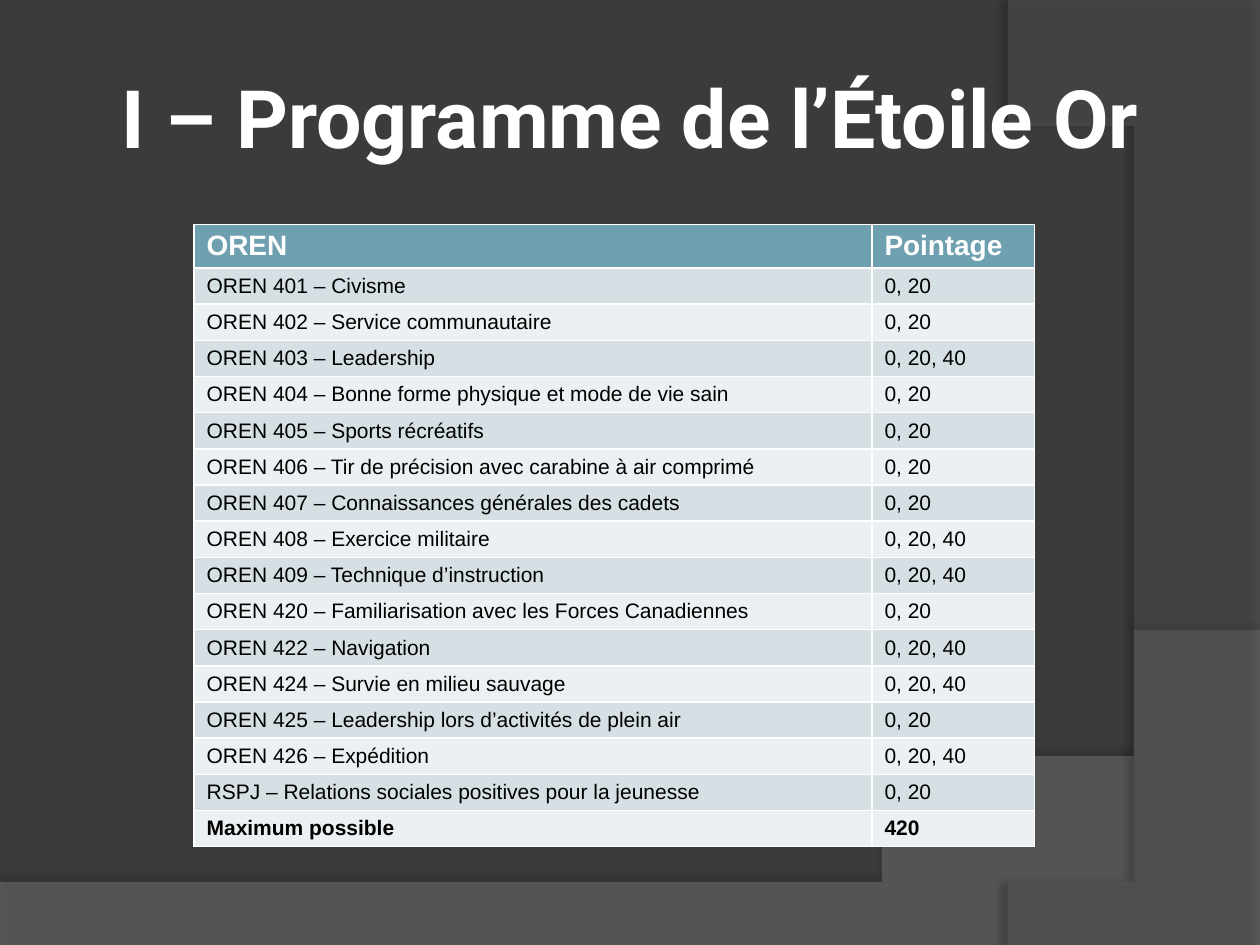
from dataclasses import dataclass
from lxml import etree
from pptx import Presentation
from pptx.dml.color import RGBColor
from pptx.enum.text import MSO_ANCHOR, PP_ALIGN
from pptx.oxml.ns import qn
from pptx.util import Inches, Pt

CENTER = PP_ALIGN.CENTER
MIDDLE = MSO_ANCHOR.MIDDLE

BACKGROUND = RGBColor(0x3B, 0x3B, 0x3B)
WHITE = RGBColor(0xFF, 0xFF, 0xFF)
BLACK = RGBColor(0, 0, 0)
HEADER = RGBColor(0x6E, 0xA0, 0xB0)
BANDS = (RGBColor(0xD5, 0xDF, 0xE4), RGBColor(0xEB, 0xF0, 0xF2))

Point = tuple[float, float]


@dataclass
class Sweep:
    """Curved background area: straight corners, closed by one Bezier curve."""
    corners: list[Point]
    curve: tuple[Point, Point, Point, Point]
    color: RGBColor
    alpha: int
    shadow_alpha: int
    blur: float
    distance: float
    direction: int


SWEEPS = [
    Sweep([(0, 7.05), (0, 7.5), (10, 7.5)],
          ((10, 5.2), (5.59, 7.29), (3.91, 7.19), (0, 7.05)),
          RGBColor(0x7F, 0x7F, 0x7F), 45, 35, 4, 3.5, 270),
    Sweep([(10, 0.02), (10, 7.5)],
          ((8.21, 7.5), (9.35, 6.19), (10.18, 3), (8, 0)),
          RGBColor(0x5E, 0x5E, 0x5E), 40, 45, 4, 4, 180),
]

ROWS = [
    ("OREN", "Pointage"),
    ("OREN 401 – Civisme", "0, 20"),
    ("OREN 402 – Service communautaire", "0, 20"),
    ("OREN 403 – Leadership", "0, 20, 40"),
    ("OREN 404 – Bonne forme physique et mode de vie sain", "0, 20"),
    ("OREN 405 – Sports récréatifs", "0, 20"),
    ("OREN 406 – Tir de précision avec carabine à air comprimé", "0, 20"),
    ("OREN 407 – Connaissances générales des cadets", "0, 20"),
    ("OREN 408 – Exercice militaire", "0, 20, 40"),
    ("OREN 409 – Technique d’instruction", "0, 20, 40"),
    ("OREN 420 – Familiarisation avec les Forces Canadiennes", "0, 20"),
    ("OREN 422 – Navigation", "0, 20, 40"),
    ("OREN 424 – Survie en milieu sauvage", "0, 20, 40"),
    ("OREN 425 – Leadership lors d’activités de plein air", "0, 20"),
    ("OREN 426 – Expédition", "0, 20, 40"),
    ("RSPJ – Relations sociales positives pour la jeunesse", "0, 20"),
    ("Maximum possible", "420"),
]
COLUMN_WIDTHS = (5.38, 1.29)
HEADER_HEIGHT, ROW_HEIGHT = 0.34, 0.28


def bezier(points: tuple[Point, ...], steps: int = 60) -> list[Point]:
    weights = [((1 - t) ** 3, 3 * t * (1 - t) ** 2, 3 * t ** 2 * (1 - t), t ** 3)
               for t in (i / steps for i in range(steps + 1))]
    return [(sum(w * x for w, (x, _) in zip(ws, points)),
             sum(w * y for w, (_, y) in zip(ws, points))) for ws in weights]


def add_alpha(color_el, percent: int) -> None:
    etree.SubElement(color_el, qn("a:alpha"), val=str(percent * 1000))


def add_sweep(s, sweep: Sweep):
    start, *rest = sweep.corners + bezier(sweep.curve)
    builder = s.shapes.build_freeform(*start, scale=Inches(1))
    builder.add_line_segments(rest, close=True)
    sp = builder.convert_to_shape()
    sp.fill.solid()
    sp.fill.fore_color.rgb = sweep.color
    sp.line.fill.background()
    sp.shadow.inherit = False
    props = sp.element.spPr
    add_alpha(props.find(f".//{qn('a:srgbClr')}"), sweep.alpha)
    shadow = etree.SubElement(
        props.find(qn("a:effectLst")), qn("a:outerShdw"),
        blurRad=str(Pt(sweep.blur)), dist=str(Pt(sweep.distance)),
        dir=str(sweep.direction * 60000), algn="ctr", rotWithShape="0")
    add_alpha(etree.SubElement(shadow, qn("a:srgbClr"), val=str(BLACK)),
              sweep.shadow_alpha)
    return sp


def write(tf, text: str, font: str, size: float, color: RGBColor, bold: bool):
    p = tf.paragraphs[0]
    r = p.add_run()
    r.text = text
    for name, value in {"name": font, "size": Pt(size), "bold": bold}.items():
        setattr(r.font, name, value)
    r.font.color.rgb = color
    return p


def add_title(s) -> None:
    title = s.shapes.title
    box = {"left": 0.5, "top": 0.3, "width": 9, "height": 1.25}
    for name, value in box.items():
        setattr(title, name, Inches(value))
    tf = title.text_frame
    for side in ("left", "top", "right", "bottom"):
        setattr(tf, f"margin_{side}", Inches(0.05))
    tf.vertical_anchor = MIDDLE
    p = write(tf, "I – Programme de l’Étoile Or", "Roboto", 46, WHITE, True)
    p.alignment = CENTER


def add_score_table(s) -> None:
    height = HEADER_HEIGHT + ROW_HEIGHT * (len(ROWS) - 1)
    table = s.shapes.add_table(
        len(ROWS), len(COLUMN_WIDTHS), Inches(1.54), Inches(1.78),
        Inches(sum(COLUMN_WIDTHS)), Inches(height)).table
    for column, width in zip(table.columns, COLUMN_WIDTHS):
        column.width = Inches(width)
    for i, texts in enumerate(ROWS):
        header = i == 0
        bold = i in (0, len(ROWS) - 1)
        table.rows[i].height = Inches(HEADER_HEIGHT if header else ROW_HEIGHT)
        for j, text in enumerate(texts):
            cell = table.cell(i, j)
            cell.fill.solid()
            cell.fill.fore_color.rgb = HEADER if header else BANDS[(i - 1) % 2]
            write(cell.text_frame, text, "Arial", 16 if header else 12,
                  WHITE if header else BLACK, bold)


def main() -> None:
    prs = Presentation()
    prs.slide_width, prs.slide_height = Inches(10), Inches(7.5)
    s = prs.slides.add_slide(prs.slide_layouts[5])
    s.background.fill.solid()
    s.background.fill.fore_color.rgb = BACKGROUND
    add_title(s)
    tree = s.shapes.title.element.getparent()
    for i, sweep in enumerate(SWEEPS):
        tree.insert(2 + i, add_sweep(s, sweep).element)  # behind the title
    add_score_table(s)
    prs.save("out.pptx")


if __name__ == "__main__":
    main()
